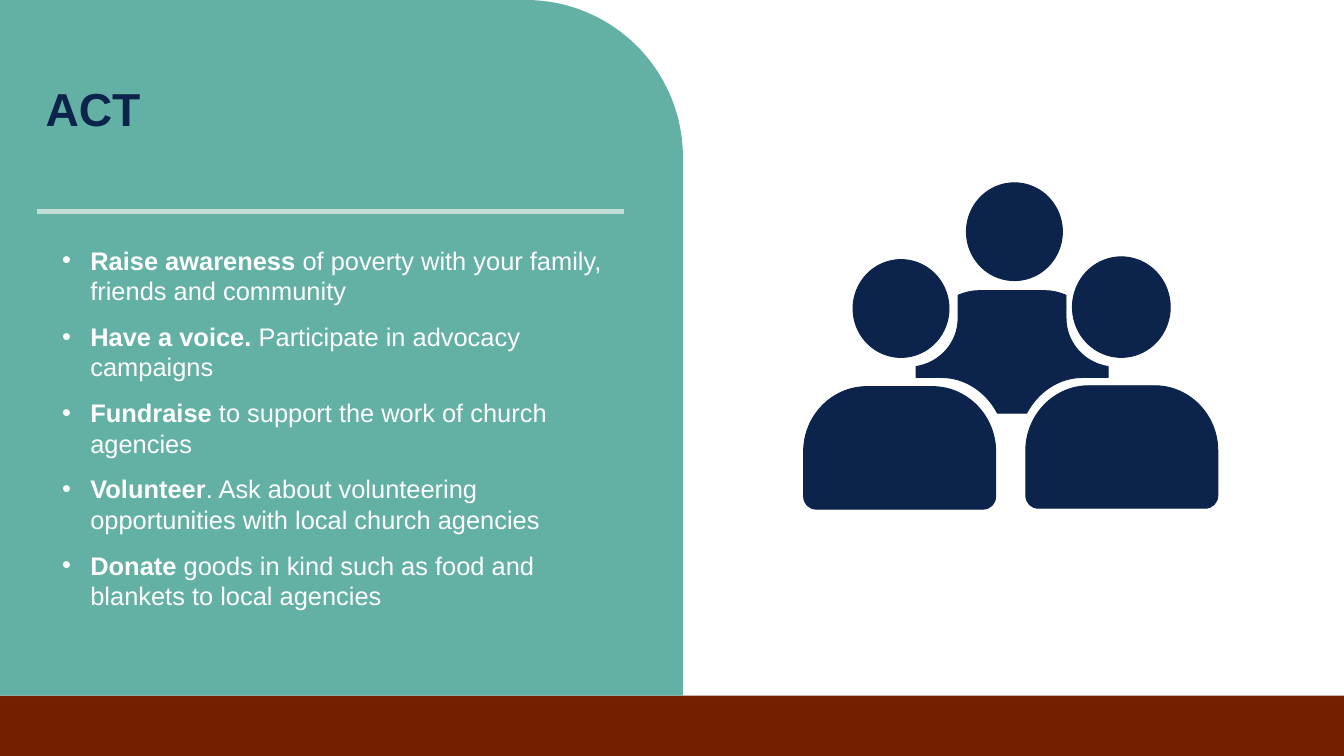
from lxml import etree
from pptx import Presentation
from pptx.dml.color import RGBColor
from pptx.enum.shapes import MSO_CONNECTOR, MSO_SHAPE
from pptx.oxml.ns import qn
from pptx.util import Emu, Inches, Pt

RECTANGLE = MSO_SHAPE.RECTANGLE
ROUNDED_CORNER = MSO_SHAPE.ROUND_1_RECTANGLE
OVAL = MSO_SHAPE.OVAL
STRAIGHT = MSO_CONNECTOR.STRAIGHT

COLUMNS, ROWS = 147, 82.7
NAVY, TEAL, PALE_TEAL, WHITE = "0C244C", "63B1A4", "C3DDD7", "FFFFFF"

ACTIONS = [
    ("Raise awareness ", "of poverty with your family, friends and community"),
    ("Have a voice. ", "Participate in advocacy campaigns"),
    ("Fundraise", " to support the work of church agencies"),
    ("Volunteer", ". Ask about volunteering opportunities with local church agencies"),
    ("Donate ", "goods in kind such as food and blankets to local agencies"),
]

# Right halves of the people's outlines, measured from the top of their axis.
# One point is a straight step, three points are a Bezier curve.
SHOULDERS = [
    [(3.6, 0)],
    [(7.4, 0), (10.5, 3.2), (10.5, 7.1)],
    [(10.5, 12)],
    [(10.5, 12.8), (9.9, 13.4), (9.1, 13.4)],
]
BACK_TORSO = [
    [(3.6, 0)],
    [(4.4, 0), (5.2, 0.2), (5.9, 0.5)],
    [(5.9, 3)],
    [(5.9, 5.7), (7.9, 7.9), (10.5, 8.3)],
    [(10.5, 9.5)],
    [(7.7, 9.5)],
    [(5.1, 9.5), (2.8, 11.1), (1.6, 13.4)],
]


def color(value):
    return RGBColor.from_string(value)


def mirror(segments):
    """Segments of the left half, walked from the bottom back to the top."""
    left = [[segments[-1][-1]]]
    for previous, segment in reversed(list(zip(segments, segments[1:]))):
        left.append([*reversed(segment[:-1]), previous[-1]])
    return [[(-x, y) for x, y in segment] for segment in left]


class SlideBuilder:
    font = "Arial"

    def __init__(self, presentation):
        self.slide = presentation.slides.add_slide(presentation.slide_layouts[6])
        self.column = presentation.slide_width / COLUMNS
        self.row = presentation.slide_height / ROWS

    def place(self, x, y):
        return Emu(round(x * self.column)), Emu(round(y * self.row))

    def paint(self, shape, fill, hairline=False):
        shape.shadow.inherit = False
        shape.fill.solid()
        shape.fill.fore_color.rgb = color(fill)
        if hairline:
            shape.line.color.rgb = color(fill)
            shape.line.width = Pt(0)
        else:
            shape.line.fill.background()

    def shape(self, kind, left, top, width, height, fill, hairline=False):
        shape = self.slide.shapes.add_shape(
            kind, *self.place(left, top), *self.place(width, height))
        self.paint(shape, fill, hairline)
        return shape

    def symmetric_outline(self, axis, top, half, fill):
        segments = [[self.place(axis + x, top + y) for x, y in segment]
                    for segment in half + mirror(half)]
        start, *corners = [segment[-1] for segment in segments]
        builder = self.slide.shapes.build_freeform(*start)
        builder.add_line_segments(corners, close=True)
        shape = builder.convert_to_shape()
        self.paint(shape, fill, hairline=True)
        # Bend the steps that have control points
        steps = list(shape._element.iter(qn("a:lnTo")))
        for step, segment in zip(steps, segments[1:]):
            if len(segment) == 3:
                step.tag = qn("a:cubicBezTo")
                for index, (x, y) in enumerate(segment[:2]):
                    point = etree.Element(
                        qn("a:pt"), x=str(x - shape.left), y=str(y - shape.top))
                    step.insert(index, point)

    def line(self, start, end, stroke, width):
        connector = self.slide.shapes.add_connector(
            STRAIGHT, *self.place(*start), *self.place(*end))
        connector.line.color.rgb = color(stroke)
        connector.line.width = Pt(width)
        etree.SubElement(connector._element.spPr, qn("a:effectLst"))

    def text_box(self, left, top, width, height):
        box = self.slide.shapes.add_textbox(
            *self.place(left, top), *self.place(width, height))
        box.text_frame.word_wrap = True
        return box.text_frame

    def style(self, run, size, ink, bold):
        run.font.name = self.font
        run.font.size = Pt(size)
        run.font.color.rgb = color(ink)
        run.font.bold = bold

    def title(self, text, left, top, width, height, size, ink):
        frame = self.text_box(left, top, width, height)
        frame.margin_top = Inches(0.04)
        frame.text = text
        self.style(frame.paragraphs[0].runs[0], size, ink, True)

    def bullet(self, paragraph, indent):
        properties = paragraph._p.get_or_add_pPr()
        properties.set("marL", str(Inches(indent)))
        properties.set("indent", str(-Inches(indent)))
        etree.SubElement(properties, qn("a:buFont"), typeface=self.font)
        etree.SubElement(properties, qn("a:buChar"), char="•")

    def bullet_list(self, items, left, top, width, height, size, ink):
        frame = self.text_box(left, top, width, height)
        for index, (lead, detail) in enumerate(items):
            paragraph = frame.add_paragraph() if index else frame.paragraphs[0]
            self.bullet(paragraph, 0.31)
            paragraph.space_after = Pt(12)
            for text, bold in ((lead, True), (detail, False)):
                run = paragraph.add_run()
                run.text = text
                self.style(run, size, ink, bold)


def main():
    presentation = Presentation()
    presentation.slide_width = Inches(14.7)
    presentation.slide_height = Inches(8.27)
    builder = SlideBuilder(presentation)

    # Footer bands and side panel
    for top, fill in ((76.1, "762000"), (76.8, "761F00")):
        builder.shape(RECTANGLE, 0, top, COLUMNS, ROWS - top, fill)
    panel = builder.shape(ROUNDED_CORNER, 0, 0, 74.7, 76.1, TEAL)
    panel.adjustments[0] = 0.23

    # Title, rule and list of actions
    builder.line((4, 23.1), (68.3, 23.1), PALE_TEAL, 4)
    builder.bullet_list(ACTIONS, 5.8, 26.3, 62.5, 45.5, 20, WHITE)
    builder.title("ACT", 4, 8.4, 64.3, 11.6, 36.4, NAVY)

    # Group of three people
    for left, top, width, height in (
            (117.3, 28.1, 10.7, 11), (105.7, 20, 10.5, 10.7), (93.3, 28.4, 10.5, 10.7)):
        builder.shape(OVAL, left, top, width, height, NAVY, hairline=True)
    for axis, top, half in (
            (110.7, 31.8, BACK_TORSO), (122.7, 42.2, SHOULDERS), (98.4, 42.3, SHOULDERS)):
        builder.symmetric_outline(axis, top, half, NAVY)

    presentation.save("out.pptx")


if __name__ == "__main__":
    main()
